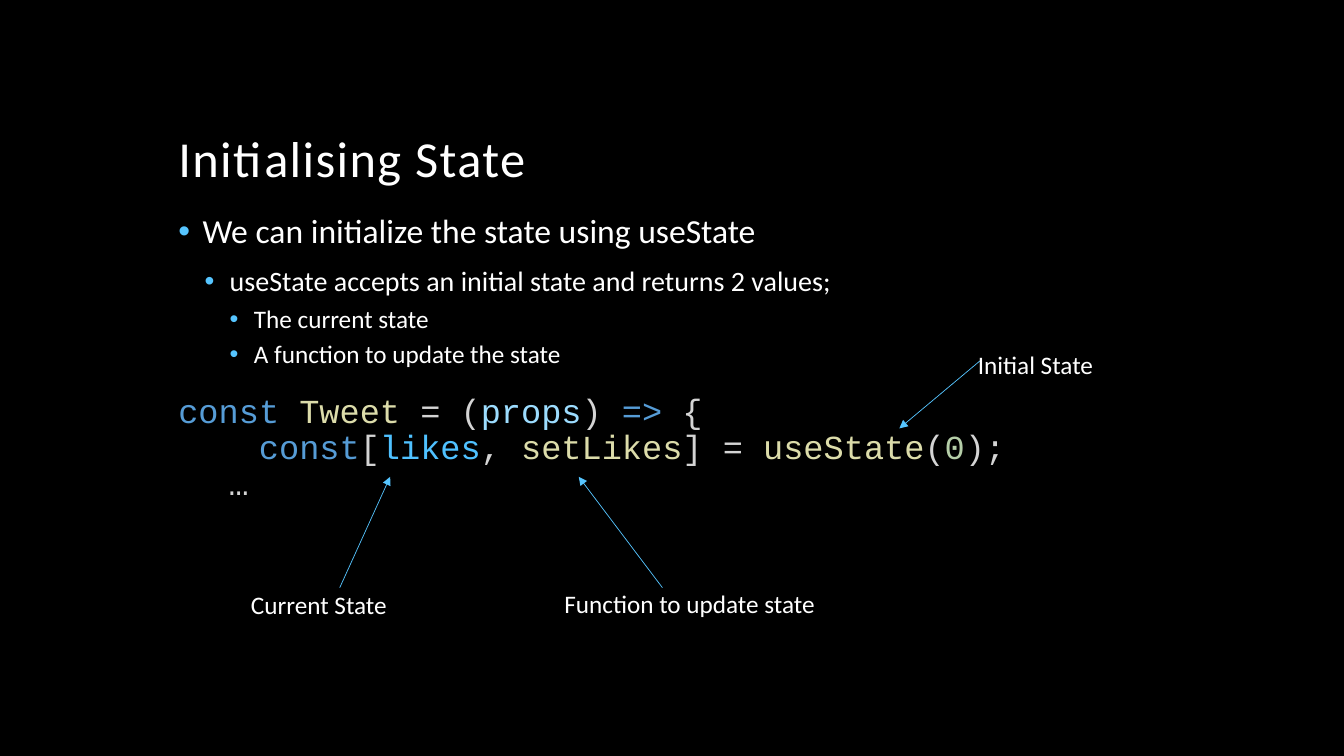
from dataclasses import dataclass
from lxml.etree import SubElement as Sub
from pptx import Presentation
from pptx.dml.color import RGBColor as Rgb
from pptx.enum.shapes import MSO_CONNECTOR as Conn
from pptx.enum.text import MSO_ANCHOR as Anchor, MSO_AUTO_SIZE as Auto
from pptx.oxml.ns import qn
from pptx.util import Inches, Pt


@dataclass
class Theme:
    back: str = "000000"
    text: str = "FFFFFF"
    blue: str = "56C5FF"
    key: str = "569CD6"
    func: str = "DCDCAA"
    mark: str = "D4D4D4"
    prop: str = "9CDCFE"
    var: str = "4FC1FF"
    num: str = "B5CEA8"
    title: int = 36
    large: int = 24
    mid: int = 20
    small: int = 18
    sans: str = "Calibri"
    mono: str = "Courier New"


theme = Theme()


def write(frame, text, size, color=theme.text, font=theme.sans, level=0,
          left=0, hang=0, before=0, lead=1.0, track=0):
    para = frame.paragraphs[0]
    if para.runs:
        para = frame.add_paragraph()
    para.level = level
    para.line_spacing = lead
    para.space_before = Pt(before)
    if hang:
        props = para._p.get_or_add_pPr()
        props.set("marL", str(Inches(left)))
        props.set("indent", str(-Inches(hang)))
        Sub(Sub(props, qn("a:buClr")), qn("a:srgbClr"), val=theme.blue)
        Sub(props, qn("a:buFont"), typeface="Arial")
        Sub(props, qn("a:buChar"), char="•")
    parts = [(text, color)] if isinstance(text, str) else text
    for words, tint in parts:
        for row, line in enumerate(words.split("\n")):
            if row:
                para.add_line_break()
            run = para.add_run()
            run.text = line
            run.font.size = Pt(size)
            run.font.name = font
            run.font.color.rgb = Rgb.from_string(tint)
            if track:
                run._r.get_or_add_rPr().set("spc", str(track * 100))


deck = Presentation()
deck.slide_width, deck.slide_height = Inches(13.33), Inches(7.5)
slide = deck.slides.add_slide(deck.slide_layouts[6])
slide.background.fill.solid()
slide.background.fill.fore_color.rgb = Rgb.from_string(theme.back)


def add_box(*place, wrap=True):
    frame = slide.shapes.add_textbox(*map(Inches, place)).text_frame
    frame.word_wrap = wrap
    return frame


head = add_box(1.67, 0.42, 10, 1.5)
head.vertical_anchor = Anchor.BOTTOM
write(head, "Initialising State", theme.title, lead=0.9, track=1)

body = add_box(1.67, 2.08, 9.99, 4.5)
points = [
    ("We can initialize the state using useState", theme.large, 0, 0.24, 0.24, 0),
    ("useState accepts an initial state and returns 2 values;", theme.mid, 1, 0.51, 0.25, 12),
    ("The current state", theme.small, 2, 0.75, 0.24, 6),
    ("A function to update the state", theme.small, 2, 0.75, 0.24, 6),
]
for text, size, level, left, hang, before in points:
    write(body, text, size, level=level, left=left, hang=hang, before=before, lead=0.9)

code = [
    ("const ", theme.key), ("Tweet", theme.func), (" = (", theme.mark),
    ("props", theme.prop), (") ", theme.mark), ("=>", theme.key),
    (" {\n    ", theme.mark), ("const", theme.key), ("[", theme.mark),
    ("likes", theme.var), (", ", theme.mark), ("setLikes", theme.func),
    ("] = ", theme.mark), ("useState", theme.func), ("(", theme.mark),
    ("0", theme.num), (");\n\t…", theme.mark),
]
write(body, code, theme.large, font=theme.mono, before=18, lead=0.9)

notes = [
    ("Current State", (2.39, 5.8, 1.61, 0.4), (3.37, 5.83, 3.87, 4.73)),
    ("Function to update state", (5.5, 5.79, 2.76, 0.4), (6.57, 5.83, 5.74, 4.73)),
    ("Initial State", (9.6, 3.42, 1.39, 0.4), (9.72, 3.58, 8.92, 4.25)),
]
for text, place, ends in notes:
    arrow = slide.shapes.add_connector(Conn.STRAIGHT, *map(Inches, ends))
    arrow.line.color.rgb = Rgb.from_string(theme.blue)
    arrow.line.width = Pt(0.5)
    Sub(arrow.line._get_or_add_ln(), qn("a:tailEnd"), type="triangle")
    Sub(arrow._element.spPr, qn("a:effectLst"))
    label = add_box(*place, wrap=False)
    label.auto_size = Auto.SHAPE_TO_FIT_TEXT
    write(label, text, theme.small)

deck.save("out.pptx")
